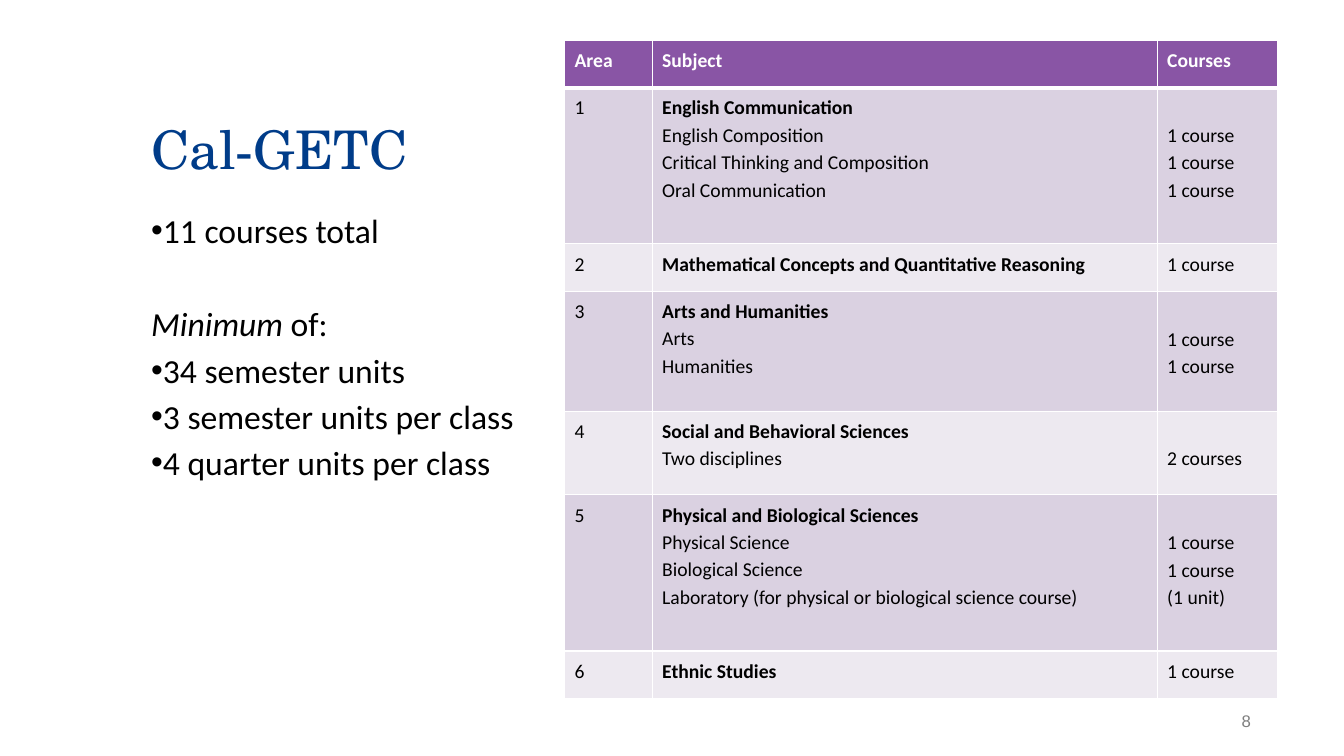
from lxml.etree import SubElement
from pptx import Presentation
from pptx.dml.color import RGBColor
from pptx.enum.text import MSO_ANCHOR, MSO_AUTO_SIZE, PP_ALIGN
from pptx.oxml import parse_xml
from pptx.oxml.ns import nsdecls, qn
from pptx.util import Pt

TITLE = "Cal-GETC"
PAGE_NUMBER = "8"
# (bulleted, [(text, italic), ...])
REQUIREMENTS = [
    (True, [("11 courses total", False)]),
    (False, [("Minimum", True), (" of:", False)]),
    (True, [("34 semester units", False)]),
    (True, [("3 semester units per class", False)]),
    (True, [("4 quarter units per class", False)]),
]
HEADER = ["Area", "Subject", "Courses"]
# (subject, courses for the whole area, [(discipline, courses), ...], row height)
AREAS = [
    ("English Communication", None, [
        ("English Composition", "1 course"),
        ("Critical Thinking and Composition", "1 course"),
        ("Oral Communication", "1 course")], 111.6),
    ("Mathematical Concepts and Quantitative Reasoning", "1 course", [], 33.84),
    ("Arts and Humanities", None, [
        ("Arts", "1 course"), ("Humanities", "1 course")], 85.68),
    ("Social and Behavioral Sciences", None, [("Two disciplines", "2 courses")], 59.76),
    ("Physical and Biological Sciences", None, [
        ("Physical Science", "1 course"),
        ("Biological Science", "1 course"),
        ("Laboratory (for physical or biological science course)", "(1 unit)")], 111.6),
    ("Ethnic Studies", "1 course", [], 33.84),
]

THEME = {
    "title": {"name": "TeX Gyre Schola", "size": 38, "color": "003C89"},
    "body": {"name": "Calibri", "size": 24, "color": "000000"},
    "header": {"name": "Calibri", "size": 14, "color": "FFFFFF", "bold": True},
    "subject": {"name": "Calibri", "size": 14, "color": "000000", "bold": True},
    "cell": {"name": "Calibri", "size": 14, "color": "000000", "bold": False},
    "number": {"name": "Arial", "size": 12, "color": "7F7F7F"},
    "header_fill": "8955A5",
    "band_fills": ["DAD1E1", "EDE9F0"],
    "border": "FFFFFF",
}
LINE_SPACING = 1.15
BODY_LINE = 33.7
TABLE_LINE = 19.65
CELL_MARGIN = 3.6
HEADER_HEIGHT = 33.84
COLUMN_WIDTHS = [62.64, 360.72, 86.4]


def style_font(font, style):
    for name, value in style.items():
        if name == "color":
            font.color.rgb = RGBColor.from_string(value)
        else:
            setattr(font, name, Pt(value) if name == "size" else value)


def place(shape, left, top, width, height):
    for name, value in zip(("left", "top", "width", "height"), (left, top, width, height)):
        setattr(shape, name, Pt(value))


def fill_title(shape):
    place(shape, 100.8, 28.8, 387.36, 104.4)
    frame = shape.text_frame
    frame.text = TITLE
    frame.auto_size = MSO_AUTO_SIZE.NONE
    frame.vertical_anchor = MSO_ANCHOR.BOTTOM
    paragraph = frame.paragraphs[0]
    paragraph.alignment = PP_ALIGN.LEFT
    paragraph.line_spacing = 0.9
    style_font(paragraph.runs[0].font, THEME["title"])


def fill_requirements(shape):
    place(shape, 100.8, 141.84, 387.36, 345.6)
    frame = shape.text_frame
    frame.auto_size = MSO_AUTO_SIZE.NONE
    for index, (bulleted, runs) in enumerate(REQUIREMENTS):
        paragraph = frame.paragraphs[0] if index == 0 else frame.add_paragraph()
        properties = paragraph._p.get_or_add_pPr()
        properties.set("marL", "0")
        properties.set("indent", "0")
        if bulleted:
            SubElement(properties, qn("a:buChar")).set("char", "•")
        else:
            SubElement(properties, qn("a:buNone"))
        paragraph.line_spacing = LINE_SPACING
        paragraph.space_before = Pt(0 if bulleted else BODY_LINE)
        for text, italic in runs:
            run = paragraph.add_run()
            run.text = text
            style_font(run.font, {**THEME["body"], "italic": italic})


def set_borders(cell, widths):
    properties = cell._tc.get_or_add_tcPr()
    for index, (side, width) in enumerate(zip("LRTB", widths)):
        properties.insert(index, parse_xml(
            f'<a:ln{side} {nsdecls("a")} w="{Pt(width)}"><a:solidFill>'
            f'<a:srgbClr val="{THEME["border"]}"/></a:solidFill></a:ln{side}>'))


def fill_cell(cell, lines, fill, borders, skipped_lines=0):
    """Write (text, style name) lines, starting below any skipped lines."""
    cell.fill.solid()
    cell.fill.fore_color.rgb = RGBColor.from_string(fill)
    set_borders(cell, borders)
    cell.margin_top = Pt(CELL_MARGIN + skipped_lines * TABLE_LINE)
    frame = cell.text_frame
    for index, (text, style) in enumerate(lines):
        paragraph = frame.paragraphs[0] if index == 0 else frame.add_paragraph()
        paragraph.line_spacing = LINE_SPACING
        run = paragraph.add_run()
        run.text = text
        style_font(run.font, THEME[style])


def add_area_table(slide):
    heights = [HEADER_HEIGHT] + [area[-1] for area in AREAS]
    table = slide.shapes.add_table(
        len(heights), len(COLUMN_WIDTHS), Pt(403.2), Pt(28.8),
        Pt(sum(COLUMN_WIDTHS)), Pt(sum(heights))).table
    table.horz_banding = False
    for column, width in zip(table.columns, COLUMN_WIDTHS):
        column.width = Pt(width)
    for row, height in zip(table.rows, heights):
        row.height = Pt(height)
    for column, text in enumerate(HEADER):
        fill_cell(table.cell(0, column), [(text, "header")], THEME["header_fill"], (1, 1, 1, 3))
    for number, (subject, total, disciplines, _) in enumerate(AREAS, start=1):
        fill = THEME["band_fills"][(number - 1) % 2]
        borders = (1, 1, 3 if number == 1 else 1, 1)
        subjects = [(subject, "subject")] + [(name, "cell") for name, _ in disciplines]
        courses = [total] if total else [count for _, count in disciplines]
        fill_cell(table.cell(number, 0), [(str(number), "cell")], fill, borders)
        fill_cell(table.cell(number, 1), subjects, fill, borders)
        fill_cell(table.cell(number, 2), [(count, "cell") for count in courses],
                  fill, borders, skipped_lines=0 if total else 1)


def add_page_number(slide):
    frame = slide.shapes.add_textbox(Pt(821.52), Pt(500.4), Pt(72), Pt(28.8)).text_frame
    frame.word_wrap = True
    frame.margin_right = Pt(0)
    frame.vertical_anchor = MSO_ANCHOR.MIDDLE
    frame.text = PAGE_NUMBER
    paragraph = frame.paragraphs[0]
    paragraph.alignment = PP_ALIGN.RIGHT
    style_font(paragraph.runs[0].font, THEME["number"])


def main():
    presentation = Presentation()
    presentation.slide_width, presentation.slide_height = Pt(960), Pt(540)
    slide = presentation.slides.add_slide(presentation.slide_layouts[1])
    fill_title(slide.shapes.title)
    fill_requirements(slide.placeholders[1])
    add_page_number(slide)
    add_area_table(slide)
    presentation.save("out.pptx")


if __name__ == "__main__":
    main()
